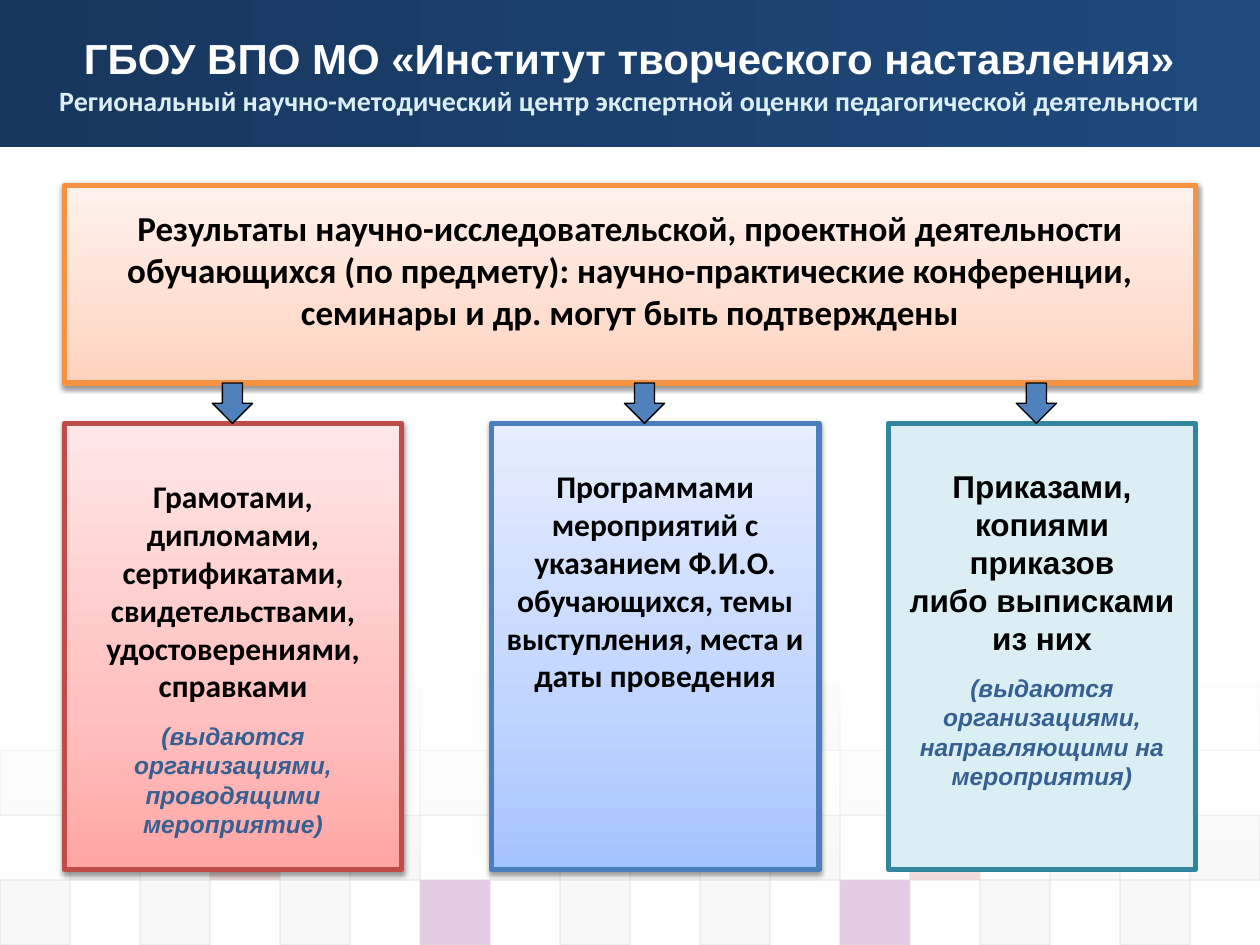
from dataclasses import dataclass
from lxml import etree
from pptx import Presentation
from pptx.dml.color import RGBColor
from pptx.enum.shapes import MSO_SHAPE
from pptx.enum.text import MSO_ANCHOR, PP_ALIGN
from pptx.oxml.ns import qn
from pptx.util import Inches, Pt

RECT, ARROW = MSO_SHAPE.RECTANGLE, MSO_SHAPE.DOWN_ARROW
TOP, CENTER = MSO_ANCHOR.TOP, PP_ALIGN.CENTER


@dataclass(frozen=True)
class Theme:
    sans: str = "Arial"
    body: str = "Calibri"
    white: str = "FFFFFF"
    black: str = "000000"
    pale: str = "DBEEF4"
    note: str = "376092"
    arrow: str = "4F81BD"
    edge: str = "DDDDDD"
    head: int = 24
    lead: int = 20
    item: int = 18
    sub: int = 16
    small: int = 14


T = Theme()
WIDE, HIGH = 10, 7.5
LEFT, RIGHT = 0.51, 9.49
BAND, ROW, FOOT = (1.47, 1.57), 3.36, 6.9
GAP = BAND[0] + BAND[1]

HEAD = [
    ("ГБОУ ВПО МО «Институт творческого наставления»",
     dict(font=T.sans, size=T.head, color=T.white)),
    ("Региональный научно-методический центр экспертной оценки педагогической деятельности",
     dict(size=T.sub, color=T.pale)),
]
LEAD = [
    ("Результаты научно-исследовательской, проектной деятельности обучающихся "
     "(по предмету): научно-практические конференции, семинары и др. могут быть подтверждены",
     dict(size=T.lead)),
]
ITEM = dict(size=T.item)
SANS = dict(size=T.item, font=T.sans)
NOTE = dict(size=T.small, font=T.sans, color=T.note, italic=True, before=9.5)
CARDS = [
    dict(left=LEFT, width=2.68, inset=0.38, line="BF4C48", mid=1.845,
         fill=[(0, "FFA6A5"), (35, "FFC0BF"), (100, "FFE7E7")],
         lines=[("Грамотами, дипломами, сертификатами, свидетельствами, "
                 "удостоверениями, справками", ITEM),
                ("(выдаются организациями, проводящими мероприятие)", NOTE)]),
    dict(left=3.9, width=2.6, inset=0.3, line="4B7EBC", mid=5.115,
         fill=[(0, "A4C4FF"), (35, "BFD4FF"), (100, "E6EEFF")],
         lines=[("Программами мероприятий с указанием Ф.И.О. обучающихся, "
                 "темы выступления, места и даты проведения", ITEM)]),
    dict(left=7.05, width=2.44, inset=0.3, line="31859C", mid=8.225, fill=T.pale,
         lines=[("Приказами, копиями приказов", SANS),
                ("либо выписками из них", SANS),
                ("(выдаются организациями, направляющими на мероприятия)", NOTE)]),
]
TINTS = {"P": "800080", "E": "EAEAEA", "D": "DDDDDD", "C": "C0504D"}
TILES = [(5, "PEEPDP..E"), (10, "DDDDCDD"), (20, "DCDDDDCDD"), (20, "DDDPDDPDD")]
COLS, TILE, START = 18, 0.515, 5.44


def tint(root, color, alpha=100):
    node = etree.SubElement(root, qn("a:srgbClr"), val=color)
    if alpha < 100:
        etree.SubElement(node, qn("a:alpha"), val=str(alpha * 1000))


def blend(shape, stops, angle):
    grad = etree.Element(qn("a:gradFill"), rotWithShape="1")
    group = etree.SubElement(grad, qn("a:gsLst"))
    for pos, *color in stops:
        tint(etree.SubElement(group, qn("a:gs"), pos=str(pos * 1000)), *color)
    etree.SubElement(grad, qn("a:lin"), ang=str(angle * 60000), scaled="0")
    props = shape.element.spPr
    props.replace(props.find(qn("a:solidFill")), grad)


def fade(fill, alpha):
    node = fill.find(qn("a:srgbClr"))
    etree.SubElement(node, qn("a:alpha"), val=str(alpha * 1000))


def draw(slide, kind, box, fill, angle=270, line=None, weight=0.75):
    shape = slide.shapes.add_shape(kind, *map(Inches, box))
    shape.shadow.inherit = False
    shape.fill.solid()
    if isinstance(fill, str):
        shape.fill.fore_color.rgb = RGBColor.from_string(fill)
    else:
        blend(shape, fill, angle)
    if line:
        shape.line.color.rgb = RGBColor.from_string(line)
        shape.line.width = Pt(weight)
    else:
        shape.line.fill.background()
    return shape


def shade(shape):
    root = shape.element.spPr.find(qn("a:effectLst"))
    drop = etree.SubElement(root, qn("a:outerShdw"), blurRad=str(Pt(3.1)),
                            dist=str(Pt(1.6)), dir="5400000", rotWithShape="0")
    tint(drop, T.black, 38)


def write(para, text, font=T.body, size=T.item, color=T.black, italic=False, before=0):
    para.alignment = CENTER
    para.space_before = Pt(before)
    para.line_spacing = 1.0
    run = para.add_run()
    run.text = text
    face = run.font
    face.name, face.size, face.bold, face.italic = font, Pt(size), True, italic
    face.color.rgb = RGBColor.from_string(color)


def fill_text(shape, lines, inset):
    frame = shape.text_frame
    frame.word_wrap = True
    frame.vertical_anchor = TOP
    frame.margin_left = frame.margin_right = Inches(0.1)
    frame.margin_top, frame.margin_bottom = Inches(0.05 + inset), Inches(0.05)
    for num, (text, form) in enumerate(lines):
        para = frame.add_paragraph() if num else frame.paragraphs[0]
        write(para, text, **form)


def tile(slide):
    step = WIDE / COLS
    for row, (alpha, marks) in enumerate(TILES):
        for num, mark in enumerate(marks):
            if mark not in TINTS:
                continue
            col = 2 * num + (row + 1) % 2
            box = (col * step, START + row * TILE, step, TILE)
            shape = draw(slide, RECT, box, TINTS[mark], line=T.edge)
            props = shape.element.spPr
            fade(props.find(qn("a:solidFill")), alpha)
            fade(props.find(qn("a:ln")).find(qn("a:solidFill")), 60)


def main():
    deck = Presentation()
    deck.slide_width, deck.slide_height = Inches(WIDE), Inches(HIGH)
    slide = deck.slides.add_slide(deck.slide_layouts[5])
    draw(slide, RECT, (0, 0, WIDE, 1.17), [(0, "17375E"), (100, "1F497D")], angle=0)
    tile(slide)
    draw(slide, RECT, (0, 5.37, WIDE, 1.62),
         [(0, T.white, 90), (100, T.white, 0)], angle=90)

    title = slide.shapes.title
    title.left, title.top, title.width, title.height = map(Inches, (0.01, 0.21, 9.97, 0.87))
    fill_text(title, HEAD, 0)
    title.element.getparent().append(title.element)

    band = draw(slide, RECT, (LEFT, BAND[0], RIGHT - LEFT, BAND[1]),
                [(0, "FFD2BD"), (35, "FFDED0"), (100, "FFF2ED")], line="F69240", weight=3)
    shade(band)
    fill_text(band, LEAD, 0.12)
    for card in CARDS:
        box = (card["left"], ROW, card["width"], FOOT - ROW)
        shape = draw(slide, RECT, box, card["fill"], line=card["line"], weight=3)
        if card["fill"] != T.pale:
            shade(shape)
        fill_text(shape, card["lines"], card["inset"])
    for card in CARDS:
        size = ROW - GAP
        draw(slide, ARROW, (card["mid"] - size / 2, GAP, size, size), T.arrow, line=T.black)
    deck.save("out.pptx")


if __name__ == "__main__":
    main()
